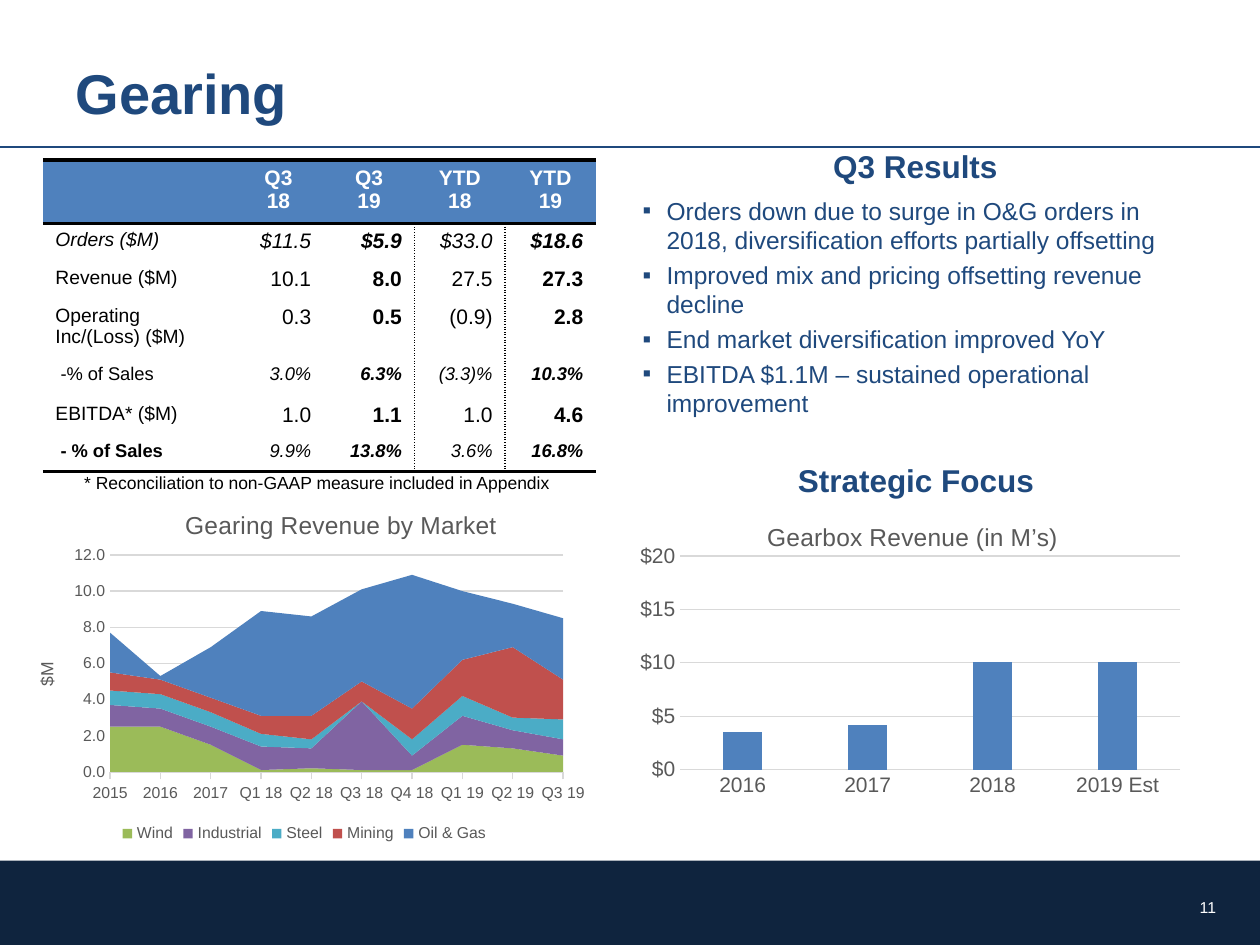
from lxml import etree
from pptx import Presentation
from pptx.chart.data import CategoryChartData
from pptx.dml.color import RGBColor
from pptx.enum.chart import XL_CHART_TYPE, XL_LEGEND_POSITION, XL_TICK_MARK
from pptx.enum.shapes import MSO_CONNECTOR, MSO_SHAPE
from pptx.enum.text import MSO_ANCHOR, MSO_AUTO_SIZE, PP_ALIGN
from pptx.oxml.ns import qn
from pptx.util import Inches, Pt

LEFT, CENTER, RIGHT = PP_ALIGN.LEFT, PP_ALIGN.CENTER, PP_ALIGN.RIGHT
TOP, MIDDLE = MSO_ANCHOR.TOP, MSO_ANCHOR.MIDDLE
NO_FIT = MSO_AUTO_SIZE.NONE
RECTANGLE, STRAIGHT = MSO_SHAPE.RECTANGLE, MSO_CONNECTOR.STRAIGHT
AREA, COLUMN = XL_CHART_TYPE.AREA_STACKED, XL_CHART_TYPE.COLUMN_CLUSTERED
TICK_NONE, TICK_OUT = XL_TICK_MARK.NONE, XL_TICK_MARK.OUTSIDE
LEGEND_BOTTOM = XL_LEGEND_POSITION.BOTTOM
NO_STYLE = "{2D5ABB26-0587-4C30-8999-92F81FD0307C}"
NAVY, DARK, BLUE = "1F497D", "0F243E", "4F81BD"
BLACK, WHITE, GRAY, RULE = "000000", "FFFFFF", "595959", "D9D9D9"

HEADERS = ["", "Q3\n18", "Q3\n19", "YTD 18", "YTD 19"]
COL_WIDTHS = [1.51, 0.72, 0.72, 0.72, 0.72]
ROW_HEIGHTS = [0.5, 0.29, 0.3, 0.46, 0.31, 0.3, 0.29]
ROWS = [
    (["Orders ($M)", "$11.5", "$5.9", "$33.0", "$18.6"], "orders"),
    (["Revenue ($M)", "10.1", "8.0", "27.5", "27.3"], "amount"),
    (["Operating Inc/(Loss) ($M)", "0.3", "0.5", "(0.9)", "2.8"], "amount"),
    ([" -% of Sales", "3.0%", "6.3%", "(3.3)%", "10.3%"], "share"),
    (["EBITDA* ($M)", "1.0", "1.1", "1.0", "4.6"], "amount"),
    ([" - % of Sales", "9.9%", "13.8%", "3.6%", "16.8%"], "total"),
]
RESULTS = [
    "Orders down due to surge in O&G orders in 2018, diversification efforts partially offsetting",
    "Improved mix and pricing offsetting revenue decline",
    "End market diversification improved YoY",
    "EBITDA $1.1M – sustained operational improvement",
]
QUARTERS = ["2015", "2016", "2017", "Q1 18", "Q2 18", "Q3 18", "Q4 18", "Q1 19", "Q2 19", "Q3 19"]
MARKETS = [
    ("Wind", [2.5, 2.5, 1.5, 0.1, 0.2, 0.1, 0.1, 1.5, 1.3, 0.9], "9BBB59"),
    ("Industrial", [1.2, 1, 1, 1.3, 1.1, 3.8, 0.8, 1.6, 1, 0.9], "8064A2"),
    ("Steel", [0.8, 0.8, 0.8, 0.7, 0.5, 0, 0.9, 1.1, 0.7, 1.1], "4BACC6"),
    ("Mining", [1, 0.8, 0.8, 1, 1.3, 1.1, 1.7, 2, 3.9, 2.2], "C0504D"),
    ("Oil & Gas", [2.2, 0.2, 2.8, 5.8, 5.5, 5.1, 7.4, 3.8, 2.4, 3.4], BLUE),
]
YEARS = ["2016", "2017", "2018", "2019 Est"]
GEARBOX = [("Series 1", [3.5, 4.2, 10.1, 10.1], BLUE)]


def color(value):
    return RGBColor.from_string(value)


def inches(box):
    return [Inches(v) for v in box]


def style(font, size, fill, bold=False, italic=False):
    font.name, font.size, font.bold, font.italic = "Arial", Pt(size), bold, italic
    font.color.rgb = color(fill)


def write(p, text, size, fill, align=LEFT, bold=False, italic=False):
    p.alignment = align
    r = p.add_run()
    r.text = text
    style(r.font, size, fill, bold, italic)


def place(sp, box, anchor):
    sp.left, sp.top, sp.width, sp.height = inches(box)
    tf = sp.text_frame
    tf.auto_size, tf.vertical_anchor = NO_FIT, anchor
    return tf


def add_text(s, box, text, size, fill, align=LEFT, bold=False, anchor=TOP):
    tf = s.shapes.add_textbox(*inches(box)).text_frame
    tf.word_wrap, tf.vertical_anchor = True, anchor
    write(tf.paragraphs[0], text, size, fill, align, bold)


def add_frame(s, box):
    x, y, w, h = box
    band = s.shapes.add_shape(RECTANGLE, *inches((x, y + 6.83, w, h - 6.83)))
    band.shadow.inherit = False
    band.fill.solid()
    band.fill.fore_color.rgb = color(DARK)
    band.line.fill.background()
    rule = s.shapes.add_connector(STRAIGHT, *inches((x, y + 1.17, x + w, y + 1.17)))
    rule.line.color.rgb, rule.line.width = color(NAVY), Pt(1.25)
    etree.SubElement(rule._element.spPr, qn("a:effectLst"))
    add_text(s, (x + w - 0.75, y + 7, 0.5, 0.4), "11", 9, WHITE, RIGHT, anchor=MIDDLE)


def add_title(s, box):
    tf = place(s.shapes.title, box, MIDDLE)
    write(tf.paragraphs[0], "Gearing", 32, NAVY, bold=True)


def set_bullet(p, char=None):
    pPr = p._p.get_or_add_pPr()
    indent = Inches(0.19) if char else 0
    pPr.set("marL", str(indent))
    pPr.set("indent", str(-indent))
    if char:
        etree.SubElement(pPr, qn("a:buFont"), typeface="Arial")
        etree.SubElement(pPr, qn("a:buChar"), char=char)
    else:
        etree.SubElement(pPr, qn("a:buNone"))


def add_results(s, box):
    tf = place(s.placeholders[1], box, TOP)
    p = tf.paragraphs[0]
    set_bullet(p)
    p.space_before, p.space_after = Pt(0), Pt(6)
    write(p, "Q3 Results", 18, NAVY, CENTER, True)
    for text in RESULTS:
        p = tf.add_paragraph()
        set_bullet(p, "▪")
        p.space_before, p.space_after = Pt(0), Pt(3)
        write(p, text, 14, NAVY)


def set_borders(cell, **sides):
    tcPr = cell._tc.get_or_add_tcPr()
    for i, side in enumerate(k for k in "LRTB" if k in sides):
        width, dash = sides[side]
        ln = etree.Element(qn(f"a:ln{side}"), w=str(Pt(width)))
        fill = etree.SubElement(ln, qn("a:solidFill"))
        etree.SubElement(fill, qn("a:srgbClr"), val=BLACK)
        etree.SubElement(ln, qn("a:prstDash"), val=dash)
        tcPr.insert(i, ln)


def fill_cell(cell, text, fill, size, ink, align, bold, italic):
    cell.fill.solid()
    cell.fill.fore_color.rgb = color(fill)
    tf = cell.text_frame
    for i, line in enumerate(text.split("\n")):
        p = tf.add_paragraph() if i else tf.paragraphs[0]
        write(p, line, size, ink, align, bold, italic)


def add_results_table(s, box):
    tbl = s.shapes.add_table(len(ROWS) + 1, len(HEADERS), *inches(box)).table
    tbl.horz_banding = False
    tbl._tbl.tblPr.find(qn("a:tableStyleId")).text = NO_STYLE
    for col, width in zip(tbl.columns, COL_WIDTHS):
        col.width = Inches(width)
    for row, height in zip(tbl.rows, ROW_HEIGHTS):
        row.height = Inches(height)
    thick, dotted = (2, "solid"), (1, "sysDot")
    for c, text in enumerate(HEADERS):
        cell = tbl.cell(0, c)
        fill_cell(cell, text, BLUE, 12, WHITE, CENTER, True, False)
        set_borders(cell, T=thick, B=thick)
    for n, (values, kind) in enumerate(ROWS, 1):
        share = kind in ("share", "total")
        for c, text in enumerate(values):
            cell = tbl.cell(n, c)
            size = 10.5 if share else 12 if c else 11
            bold = c in (2, 4) or (c == 0 and kind == "total")
            italic = kind == "orders" or (share and c > 0)
            fill_cell(cell, text, WHITE, size, BLACK, RIGHT if c else LEFT, bold, italic)
            sides = {"B": thick} if n == len(ROWS) else {}
            if c in (2, 3):
                sides["R"] = dotted
            if c in (3, 4):
                sides["L"] = dotted
            set_borders(cell, **sides)


def set_layout(parent, index, **values):
    for old in parent.findall(qn("c:layout")):
        parent.remove(old)
    layout = etree.Element(qn("c:layout"))
    manual = etree.SubElement(layout, qn("c:manualLayout"))
    if "w" in values:
        etree.SubElement(manual, qn("c:layoutTarget"), val="inner")
    for key in ("x", "y"):
        etree.SubElement(manual, qn(f"c:{key}Mode"), val="edge")
    for key, value in values.items():
        etree.SubElement(manual, qn(f"c:{key}"), val=str(value))
    parent.insert(index, layout)


def add_chart(s, box, kind, cats, series, title, title_at, plot_at, size, top, unit, fmt):
    data = CategoryChartData()
    data.categories = cats
    for name, values, _ in series:
        data.add_series(name, values)
    chart = s.shapes.add_chart(kind, *inches(box), data).chart
    style(chart.font, 10, BLACK)
    chart.has_title, chart.has_legend = True, False
    write(chart.chart_title.text_frame.paragraphs[0], title, 14, GRAY, CENTER)
    set_layout(chart.chart_title._element, 1, **dict(zip("xy", title_at)))
    set_layout(chart._chartSpace.chart.plotArea, 0, **dict(zip("xywh", plot_at)))
    for ser, (_, _, fill) in zip(chart.plots[0].series, series):
        ser.format.fill.solid()
        ser.format.fill.fore_color.rgb = color(fill)
    cat, val = chart.category_axis, chart.value_axis
    for axis in (cat, val):
        style(axis.tick_labels.font, size, GRAY)
        axis.major_tick_mark = axis.minor_tick_mark = TICK_NONE
    val.minimum_scale, val.maximum_scale, val.major_unit = 0, top, unit
    val.tick_labels.number_format, val.tick_labels.number_format_is_linked = fmt, False
    val.format.line.fill.background()
    for line in (cat.format.line, val.major_gridlines.format.line):
        line.color.rgb, line.width = color(RULE), Pt(0.75)
    return chart


def add_revenue_chart(s, box):
    chart = add_chart(s, box, AREA, QUARTERS, MARKETS, "Gearing Revenue by Market",
                      (0.29, 0.05), (0.17, 0.19, 0.77, 0.6), 9, 12, 2, "0.0")
    chart.category_axis.major_tick_mark = TICK_OUT
    write(chart.value_axis.axis_title.text_frame.paragraphs[0], "$M", 10, GRAY, CENTER)
    chart.has_legend = True
    chart.legend.position, chart.legend.include_in_layout = LEGEND_BOTTOM, False
    style(chart.legend.font, 9, GRAY)


def add_gearbox_chart(s, box):
    chart = add_chart(s, box, COLUMN, YEARS, GEARBOX, "Gearbox Revenue (in M’s)",
                      (0.23, 0.03), (0.08, 0.16, 0.91, 0.71), 12, 20, 5, '"$"#,##0')
    plot = chart.plots[0]
    plot.gap_width, plot.overlap, plot.vary_by_categories = 219, -27, False


def main():
    prs = Presentation()
    prs.slide_width, prs.slide_height = Inches(10), Inches(7.5)
    s = prs.slides.add_slide(prs.slide_layouts[1])
    add_frame(s, (0, 0, 10, 7.5))
    add_title(s, (0.5, 0.3, 9, 0.87))
    add_results(s, (5, 1.12, 4.53, 2.57))
    add_text(s, (0.57, 3.7, 4.17, 0.27), "* Reconciliation to non-GAAP measure included in Appendix", 10, BLACK)
    add_revenue_chart(s, (0.08, 3.86, 4.67, 2.87))
    add_results_table(s, (0.34, 1.27, 4.39, sum(ROW_HEIGHTS)))
    add_text(s, (5.04, 3.61, 4.46, 0.71), "Strategic Focus", 18, NAVY, CENTER, True)
    add_gearbox_chart(s, (5.05, 4.03, 4.36, 2.39))
    prs.save("out.pptx")


if __name__ == "__main__":
    main()
